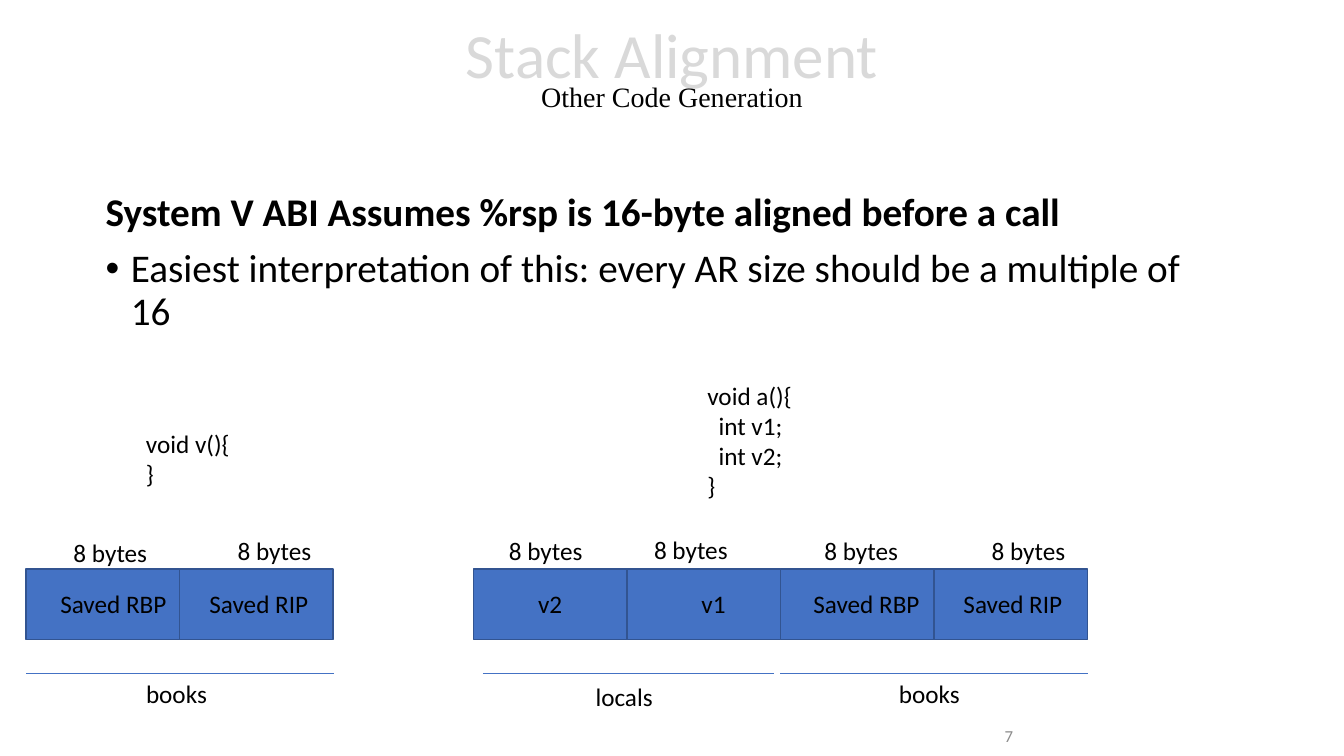
from lxml import etree
from pptx import Presentation
from pptx.dml.color import RGBColor
from pptx.enum.shapes import MSO_CONNECTOR, MSO_SHAPE
from pptx.enum.text import MSO_ANCHOR, MSO_AUTO_SIZE, PP_ALIGN
from pptx.oxml.ns import qn
from pptx.util import Pt

LEFT, CENTER, RIGHT = PP_ALIGN.LEFT, PP_ALIGN.CENTER, PP_ALIGN.RIGHT
TOP, MIDDLE = MSO_ANCHOR.TOP, MSO_ANCHOR.MIDDLE
FIXED, GROW = MSO_AUTO_SIZE.NONE, MSO_AUTO_SIZE.SHAPE_TO_FIT_TEXT
RECT, STRAIGHT = MSO_SHAPE.RECTANGLE, MSO_CONNECTOR.STRAIGHT

COLORS = {
    "text": "000000",
    "title": "D9D9D9",
    "number": "8C8C8C",
    "cell": "4472C4",
    "edge": "325491",
}
CELL_W, CELL_H = 109.6, 50.6
CELL_Y, LINE_Y = 406.3, 481


def color(name):
    return RGBColor.from_string(COLORS[name])


def write(para, text, size=18, font="Calibri", tint="text", bold=False,
          align=LEFT, space=None, before=0, indent=0, bullet=None):
    para.alignment = align
    para.line_spacing = space
    para.space_before = Pt(before)
    run = para.add_run()
    run.text = text
    run.font.size = Pt(size)
    run.font.name = font
    run.font.bold = bold
    run.font.color.rgb = color(tint)
    props = para._p.get_or_add_pPr()
    props.set("marL", str(Pt(indent)))
    props.set("indent", str(Pt(-indent if bullet else 0)))
    if bullet:
        etree.SubElement(props, qn("a:buFont")).set("typeface", "Arial")
        etree.SubElement(props, qn("a:buChar")).set("char", bullet)


class Deck:
    def __init__(self):
        self.show = Presentation()
        self.show.slide_width = Pt(960)
        self.show.slide_height = Pt(540)
        self.slide = self.show.slides.add_slide(self.show.slide_layouts[5])
        self.shapes = self.slide.shapes

    def title(self, main, sub):
        shape = self.shapes.title
        shape.left, shape.top = Pt(0), Pt(0.7)
        shape.width, shape.height = Pt(960), Pt(104.4)
        frame = shape.text_frame
        frame.auto_size = FIXED
        frame.vertical_anchor = MIDDLE
        para = frame.paragraphs[0]
        write(para, main, size=45, tint="title", align=CENTER, space=0.7)
        para.add_line_break()
        write(para, sub, size=20, font="Times New Roman", align=CENTER,
              space=0.7)

    def text(self, x, y, w, h, lines, wrap=False, anchor=TOP, **style):
        box = self.shapes.add_textbox(Pt(x), Pt(y), Pt(w), Pt(h))
        frame = box.text_frame
        frame.word_wrap = wrap
        frame.auto_size = FIXED if wrap else GROW
        frame.vertical_anchor = anchor
        for i, (line, extra) in enumerate(lines):
            para = frame.add_paragraph() if i else frame.paragraphs[0]
            write(para, line, **{**style, **extra})

    def label(self, x, y, w, line):
        self.text(x, y, w, 29, [(line, {})])

    def cell(self, x):
        box = self.shapes.add_shape(RECT, Pt(x), Pt(CELL_Y), Pt(CELL_W),
                                    Pt(CELL_H))
        box.shadow.inherit = False
        box.fill.solid()
        box.fill.fore_color.rgb = color("cell")
        box.line.color.rgb = color("edge")
        box.line.width = Pt(1)

    def line(self, start, end):
        rule = self.shapes.add_connector(STRAIGHT, Pt(start), Pt(LINE_Y),
                                         Pt(end), Pt(LINE_Y))
        rule.line.color.rgb = color("cell")
        rule.line.width = Pt(0.5)
        etree.SubElement(rule._element.spPr, qn("a:effectLst"))

    def row(self, x, cells):
        for i, (name, shift, width, size_x, size_y) in enumerate(cells):
            left = x + i * CELL_W
            self.cell(left)
            self.label(left + shift, 416.6, width, name)
            self.label(left + size_x, size_y, 67.7, "8 bytes")

    def group(self, start, end, x, y, w, name):
        self.line(start, end)
        self.label(x, y, w, name)


def main():
    deck = Deck()
    deck.title("Stack Alignment", "Other Code Generation")
    deck.text(68.4, 133.9, 783.4, 378, [
        ("System V ABI Assumes %rsp is 16-byte aligned before a call",
         {"bold": True}),
        ("Easiest interpretation of this: every AR size should be "
         "a multiple of 16", {"indent": 18, "bullet": "•"}),
    ], wrap=True, size=28, space=0.9, before=10)
    deck.text(568.8, 511.2, 162, 28.8, [("7", {})], wrap=True,
              anchor=MIDDLE, size=12, tint="number", align=RIGHT)

    deck.text(97.2, 302.4, 74.9, 51, [("void v(){", {}), ("}", {})])
    deck.text(498.2, 267.8, 75.6, 94.3, [
        ("void a(){", {}),
        ("int v1;", {"indent": 8}),
        ("int v2;", {"indent": 8}),
        ("}", {}),
    ])

    deck.row(18.7, [
        ("Saved RBP", 17.3, 91.4, 26.7, 380.2),
        ("Saved RIP", 14.2, 85.7, 34.4, 378.7),
    ])
    deck.row(338.4, [
        ("v2", 38.9, 31.7, 18, 378.7),
        ("v1", 46, 31.7, 12.1, 378),
        ("Saved RBP", 16.3, 91.4, 24.2, 378.7),
        ("Saved RIP", 13.9, 85.7, 34.1, 378.7),
    ])
    deck.group(18.7, 238.3, 97.2, 481, 58.3, "books")
    deck.group(344.9, 553, 418.3, 483.1, 55.4, "locals")
    deck.group(557.3, 776.9, 635, 481, 58.3, "books")
    deck.show.save("out.pptx")


if __name__ == "__main__":
    main()
